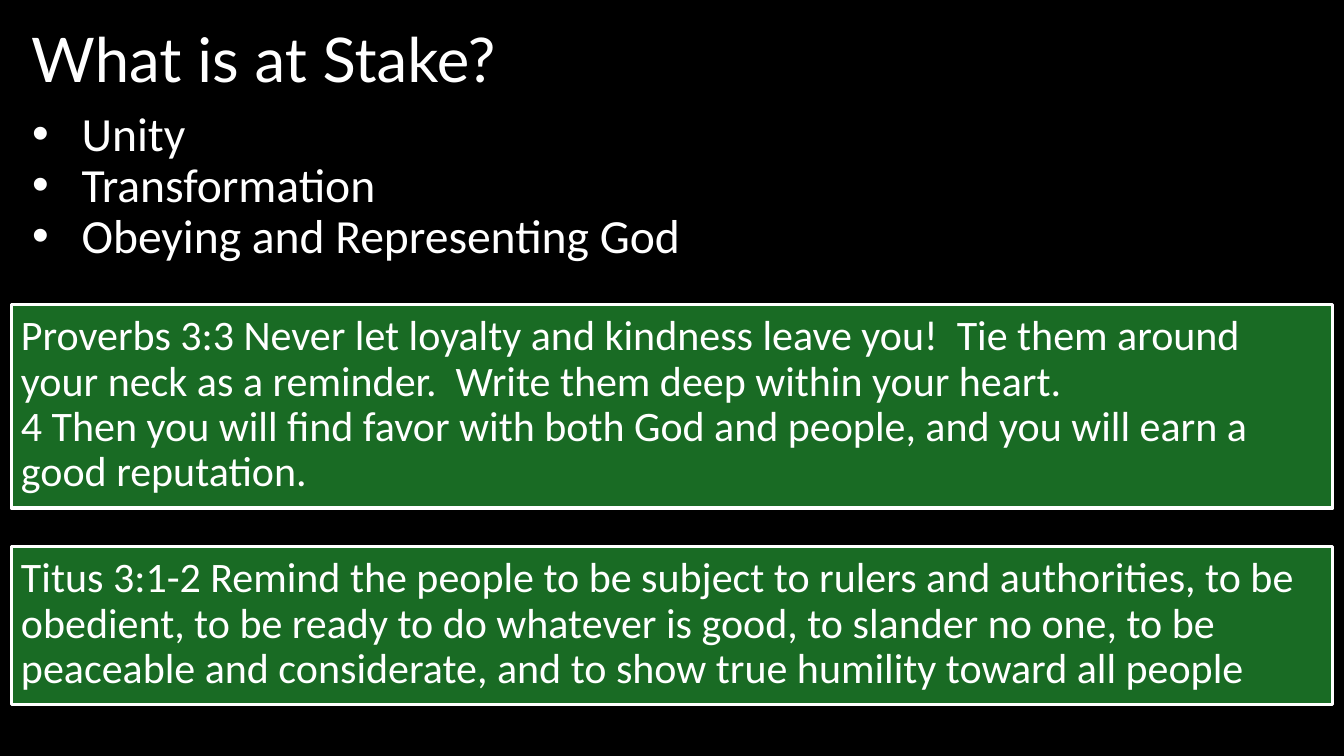
from lxml.etree import SubElement
from pptx import Presentation
from pptx.dml.color import RGBColor
from pptx.enum.shapes import MSO_SHAPE as Shape
from pptx.enum.text import MSO_ANCHOR as Anchor, MSO_AUTO_SIZE as AutoSize, PP_ALIGN as Align
from pptx.oxml.ns import qn
from pptx.util import Inches, Pt

BLACK = RGBColor(0x00, 0x00, 0x00)
WHITE = RGBColor(0xFF, 0xFF, 0xFF)
GREEN = RGBColor(0x19, 0x6B, 0x24)

WIDTH, HEIGHT = 13.33, 7.5
LEFT, TOP = 0.21, 0.2
TITLE_HEIGHT = 0.84
VERSE_LEFT = 0.11
VERSE_WIDTH = WIDTH - 2 * VERSE_LEFT

TOPICS = ["Unity", "Transformation", "Obeying and Representing God"]
PROVERBS = (
    "Proverbs 3:3 Never let loyalty and kindness leave you!  Tie them around your neck "
    "as a reminder.  Write them deep within your heart.\n"
    "4 Then you will find favor with both God and people, and you will earn a good reputation."
)
TITUS = (
    "Titus 3:1-2 Remind the people to be subject to rulers and authorities, to be obedient, "
    "to be ready to do whatever is good, to slander no one, to be peaceable and considerate, "
    "and to show true humility toward all people"
)


def place(shape, box):
    """Move a shape to a box of left, top, width and height in inches."""
    shape.left, shape.top, shape.width, shape.height = map(Inches, box)


def format_frame(frame, anchor, inset):
    """Set wrapping, anchor and vertical insets of a text frame."""
    frame.word_wrap = True
    frame.auto_size = AutoSize.NONE
    frame.vertical_anchor = anchor
    frame.margin_left = frame.margin_right = Inches(0.1)
    frame.margin_top = frame.margin_bottom = Inches(inset)


def format_para(para, font, size, before=0):
    """Give a paragraph its spacing and its runs their font."""
    para.alignment = Align.LEFT
    para.line_spacing = 0.9
    para.space_before = Pt(before)
    for span in para.runs:
        span.font.name = font
        span.font.size = Pt(size)
        span.font.color.rgb = WHITE


def add_bullet(para):
    """Give a paragraph a hanging white bullet."""
    props = para._p.get_or_add_pPr()
    props.set("marL", str(Inches(0.5)))
    props.set("indent", str(Inches(-0.49)))
    colour = SubElement(props, qn("a:buClr"))
    SubElement(colour, qn("a:srgbClr"), val=str(WHITE))
    SubElement(props, qn("a:buFont"), typeface="Arial")
    SubElement(props, qn("a:buChar"), char="•")


def fill_title(title, box, text):
    """Fill the title placeholder."""
    place(title, box)
    frame = title.text_frame
    frame.text = text
    format_frame(frame, Anchor.MIDDLE, 0.05)
    format_para(frame.paragraphs[0], "Lato", 44)


def fill_topics(body, box, topics):
    """Fill the body placeholder with a bulleted list."""
    place(body, box)
    frame = body.text_frame
    frame.text = "\n".join(topics)
    format_frame(frame, Anchor.TOP, 0.05)
    for para in frame.paragraphs:
        format_para(para, "Calibri", 34)
        add_bullet(para)


def add_verse(page, box, text):
    """Add a green panel that holds a Bible passage."""
    panel = page.shapes.add_shape(Shape.RECTANGLE, *map(Inches, box))
    panel.shadow.inherit = False
    panel.fill.solid()
    panel.fill.fore_color.rgb = GREEN
    panel.line.color.rgb = WHITE
    panel.line.width = Pt(2.25)
    frame = panel.text_frame
    format_frame(frame, Anchor.TOP, 0.1)
    para = frame.paragraphs[0]
    para.text = text
    format_para(para, "Calibri", 30, before=10)


def main():
    """Build the slide and save it."""
    deck = Presentation()
    deck.slide_width, deck.slide_height = Inches(WIDTH), Inches(HEIGHT)
    page = deck.slides.add_slide(deck.slide_layouts[1])
    page.background.fill.solid()
    page.background.fill.fore_color.rgb = BLACK
    fill_title(page.shapes.title, (LEFT, TOP, 12.2, TITLE_HEIGHT), "What is at Stake?")
    fill_topics(page.placeholders[1], (LEFT, TOP + TITLE_HEIGHT, 12.9, 6.27), TOPICS)
    add_verse(page, (VERSE_LEFT, 5.42, VERSE_WIDTH, 1.57), TITUS)
    add_verse(page, (VERSE_LEFT, 3.02, VERSE_WIDTH, 2.02), PROVERBS)
    deck.save("out.pptx")


if __name__ == "__main__":
    main()
